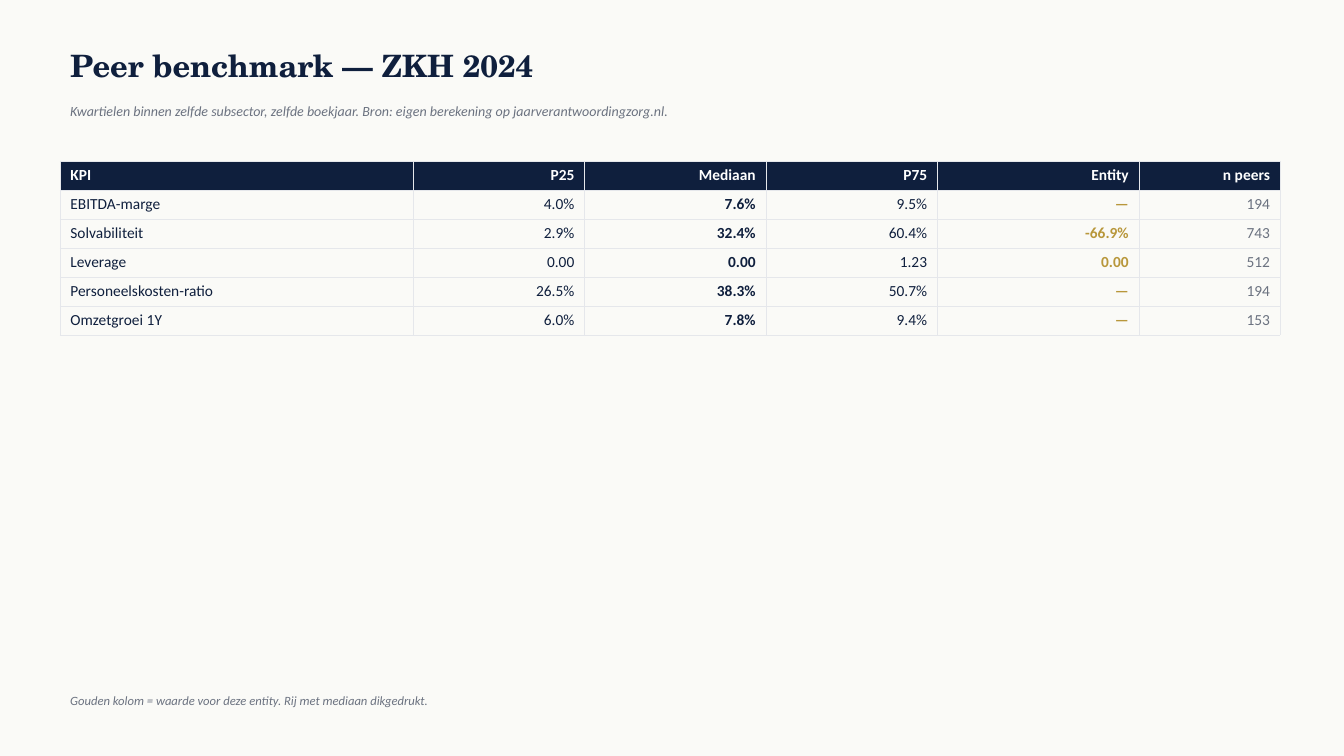
from dataclasses import dataclass

from lxml import etree
from pptx import Presentation
from pptx import util as u
from pptx.dml.color import RGBColor
from pptx.enum import text
from pptx.oxml import ns

# Content
TITLE = "Peer benchmark — ZKH 2024"
SUBTITLE = ("Kwartielen binnen zelfde subsector, zelfde boekjaar. "
            "Bron: eigen berekening op jaarverantwoordingzorg.nl.")
FOOTNOTE = "Gouden kolom = waarde voor deze entity. Rij met mediaan dikgedrukt."
BENCHMARK = [
    ("KPI", "P25", "Mediaan", "P75", "Entity", "n peers"),
    ("EBITDA-marge", "4.0%", "7.6%", "9.5%", "—", "194"),
    ("Solvabiliteit", "2.9%", "32.4%", "60.4%", "-66.9%", "743"),
    ("Leverage", "0.00", "0.00", "1.23", "0.00", "512"),
    ("Personeelskosten-ratio", "26.5%", "38.3%", "50.7%", "—", "194"),
    ("Omzetgroei 1Y", "6.0%", "7.8%", "9.4%", "—", "153"),
]


@dataclass(frozen=True)
class Theme:
    background: str = "FAFAF7"
    navy: str = "0F1F3D"
    gray: str = "6B7280"
    gold: str = "B8973B"
    white: str = "FFFFFF"
    border: str = "E5E7EB"
    heading_font: str = "TeX Gyre Schola"
    body_font: str = "Calibri"
    title_size: int = 22
    subtitle_size: int = 10
    table_size: int = 11
    footnote_size: int = 9
    border_width: float = 0.5


THEME = Theme()

# Layout in centimetres
LEFT, TEXT_WIDTH = 1.52, 30.48
TABLE_TOP, ROW_HEIGHT = 4.06, 0.73
COLUMN_WIDTHS = (8.89, 4.32, 4.57, 4.32, 5.08, 3.56)

# Text formats
TITLE_FORMAT = dict(size=THEME.title_size, name=THEME.heading_font, color=THEME.navy, bold=True)
NOTE_FORMAT = dict(name=THEME.body_font, color=THEME.gray, italic=True)
CELL_FORMAT = dict(size=THEME.table_size, name=THEME.body_font, color=THEME.navy, bold=False)
HEADER_FORMAT = dict(color=THEME.white, bold=True)
COLUMN_FORMATS = {
    "Mediaan": dict(bold=True),
    "Entity": dict(color=THEME.gold, bold=True),
    "n peers": dict(color=THEME.gray),
}
TEXT_LINES = [
    (TITLE, 1.02, 1.27, TITLE_FORMAT),
    (SUBTITLE, 2.41, 0.76, NOTE_FORMAT | dict(size=THEME.subtitle_size)),
    (FOOTNOTE, 17.27, 0.76, NOTE_FORMAT | dict(size=THEME.footnote_size)),
]


def write(paragraph, words, formats):
    run = paragraph.add_run()
    run.text = words
    for attribute, value in formats.items():
        if attribute == "color":
            run.font.color.rgb = RGBColor.from_string(value)
        else:
            setattr(run.font, attribute, u.Pt(value) if attribute == "size" else value)


def add_text_line(slide, words, top, height, formats):
    shape = slide.shapes.add_textbox(u.Cm(LEFT), u.Cm(top), u.Cm(TEXT_WIDTH), u.Cm(height))
    shape.text_frame.word_wrap = True
    shape.text_frame.vertical_anchor = text.MSO_ANCHOR.MIDDLE
    write(shape.text_frame.paragraphs[0], words, formats)


def add_borders(cell):
    properties = cell._tc.get_or_add_tcPr()
    for side in ("lnL", "lnR", "lnT", "lnB"):
        line = etree.SubElement(properties, ns.qn(f"a:{side}"), w=str(u.Pt(THEME.border_width)))
        fill = etree.SubElement(line, ns.qn("a:solidFill"))
        etree.SubElement(fill, ns.qn("a:srgbClr"), val=THEME.border)


def add_benchmark(slide):
    table = slide.shapes.add_table(
        len(BENCHMARK), len(COLUMN_WIDTHS), u.Cm(LEFT), u.Cm(TABLE_TOP),
        u.Cm(sum(COLUMN_WIDTHS)), u.Cm(ROW_HEIGHT * len(BENCHMARK))).table
    table.first_row = table.horz_banding = False
    for column, width in zip(table.columns, COLUMN_WIDTHS):
        column.width = u.Cm(width)
    for row_index, values in enumerate(BENCHMARK):
        table.rows[row_index].height = u.Cm(ROW_HEIGHT)
        for column_index, value in enumerate(values):
            cell = table.cell(row_index, column_index)
            add_borders(cell)
            if row_index == 0:
                cell.fill.solid()
                cell.fill.fore_color.rgb = RGBColor.from_string(THEME.navy)
                formats = HEADER_FORMAT
            else:
                cell.fill.background()
                formats = COLUMN_FORMATS.get(BENCHMARK[0][column_index], {})
            paragraph = cell.text_frame.paragraphs[0]
            if column_index > 0:
                paragraph.alignment = text.PP_ALIGN.RIGHT
            write(paragraph, value, CELL_FORMAT | formats)


def main():
    presentation = Presentation()
    presentation.slide_width, presentation.slide_height = u.Cm(33.87), u.Cm(19.05)
    slide = presentation.slides.add_slide(presentation.slide_layouts[6])
    slide.background.fill.solid()
    slide.background.fill.fore_color.rgb = RGBColor.from_string(THEME.background)

    # Title, subtitle and footnote
    for line in TEXT_LINES:
        add_text_line(slide, *line)

    # Benchmark table
    add_benchmark(slide)
    presentation.save("out.pptx")


if __name__ == "__main__":
    main()
